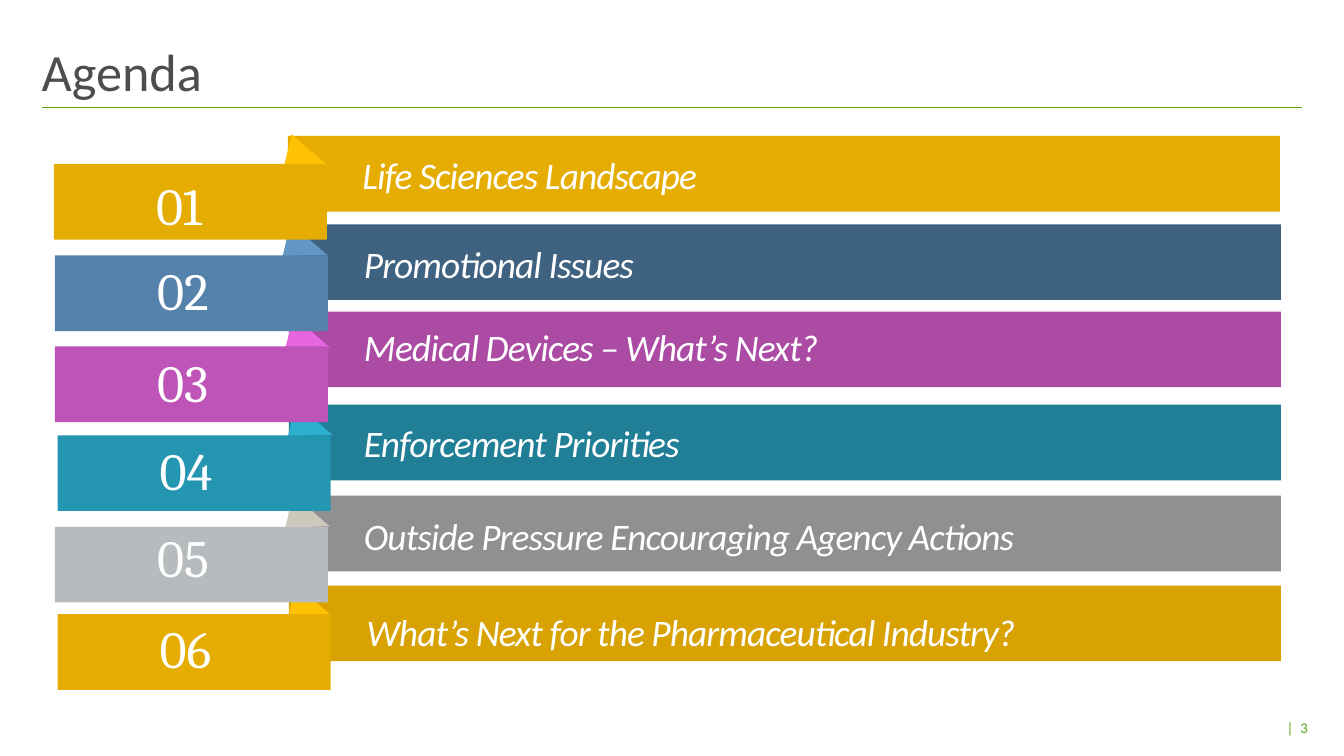
from pptx import Presentation
from pptx.dml.color import RGBColor
from pptx.enum.shapes import MSO_CONNECTOR, MSO_SHAPE
from pptx.enum.text import MSO_ANCHOR, PP_ALIGN
from pptx.oxml.ns import qn
from pptx.util import Cm, Pt
from lxml.etree import SubElement

TITLE = "Agenda"
PAGE_NUMBER = "|  3"
GREEN, WHITE, DARK = "58A618", "FFFFFF", "4D4D4D"

# topic, (bar, fold, tab colours), (bar, fold, tab, number, topic tops),
# (bar, fold, tab, topic lefts); all lengths in cm
AGENDA = [
    ("Life Sciences Landscape", ("E5AC02", "FFC103", "E5AC02"),
     (2.57, 2.54, 3.10, 3.15, 2.74), (5.44, 5.51, 1.02, 6.60)),
    ("Promotional Issues", ("3F6280", "6297C4", "5482AB"),
     (4.24, 4.22, 4.83, 4.75, 4.42), (5.46, 5.49, 1.04, 6.63)),
    ("Medical Devices – What’s Next?", ("AC4BA4", "E666E0", "BF54B8"),
     (5.89, 5.97, 6.55, 6.50, 5.99), (5.46, 5.54, 1.04, 6.63)),
    ("Enforcement Priorities", ("207F96", "2DAFCF", "2596B2"),
     (7.65, 7.62, 8.23, 8.15, 7.82), (5.46, 5.59, 1.09, 6.63)),
    ("Outside Pressure Encouraging Agency Actions", ("908F91", "CCC8BB", "B6BBBE"),
     (9.37, 9.35, 9.96, 9.80, 9.58), (5.46, 5.54, 1.04, 6.63)),
    ("What’s Next for the Pharmaceutical Industry?", ("D8A202", "FFC103", "E5AC02"),
     (11.07, 11.05, 11.61, 11.51, 11.38), (5.46, 5.59, 1.09, 6.68)),
]
BAR_WIDTH, TAB_WIDTH, BAND_HEIGHT = 18.75, 5.16, 1.43
FOLD_WIDTH, FOLD_HEIGHT = 0.64, 0.81
NUMBER_OFFSET = 1.68


def color(value):
    return RGBColor.from_string(value)


def add_block(page, kind, left, top, width, height, fill):
    block = page.shapes.add_shape(kind, Cm(left), Cm(top), Cm(width), Cm(height))
    block.shadow.inherit = False
    block.fill.solid()
    block.fill.fore_color.rgb = color(fill)
    block.line.fill.background()
    return block


def add_text(page, text, left, top, width, height, size, font="Calibri", fill=WHITE,
             italic=False, spacing=0, anchor=MSO_ANCHOR.TOP, align=PP_ALIGN.LEFT,
             wrap=True, insets=(0.25, 0.13, 0.25, 0.13)):
    box = page.shapes.add_textbox(Cm(left), Cm(top), Cm(width), Cm(height))
    frame = box.text_frame
    frame.word_wrap = wrap
    frame.vertical_anchor = anchor
    (frame.margin_left, frame.margin_top,
     frame.margin_right, frame.margin_bottom) = map(Cm, insets)
    para = frame.paragraphs[0]
    para.alignment = align
    span = para.add_run()
    span.text = text
    span.font.name = font
    span.font.size = Pt(size)
    span.font.italic = italic
    span.font.color.rgb = color(fill)
    if spacing:
        span.font._element.set("spc", str(int(spacing * 100)))


def add_rule(page, left, right, top):
    rule = page.shapes.add_connector(
        MSO_CONNECTOR.STRAIGHT, Cm(left), Cm(top), Cm(right), Cm(top))
    rule.line.color.rgb = color(GREEN)
    rule.line.width = Pt(0.5)
    SubElement(rule._element.spPr, qn("a:effectLst"))


def add_topic(page, number, topic, colors, tops, lefts):
    bar_top, fold_top, tab_top, number_top, topic_top = tops
    bar_left, fold_left, tab_left, topic_left = lefts
    bar_color, fold_color, tab_color = colors
    add_block(page, MSO_SHAPE.RECTANGLE, bar_left, bar_top,
              BAR_WIDTH, BAND_HEIGHT, bar_color)
    fold = add_block(page, MSO_SHAPE.ISOSCELES_TRIANGLE, fold_left, fold_top,
                     FOLD_WIDTH, FOLD_HEIGHT, fold_color)
    fold.adjustments[0] = 0.66
    fold.rotation = 103.5
    add_block(page, MSO_SHAPE.RECTANGLE, tab_left, tab_top,
              TAB_WIDTH, BAND_HEIGHT, tab_color)
    add_text(page, f"{number:02}", tab_left + NUMBER_OFFSET, number_top,
             1.78, 1.45, 28, font="Cambria")
    add_text(page, topic, topic_left, topic_top, 17.55, 1.12, 20,
             italic=True, spacing=-0.5)


def main():
    deck = Presentation()
    deck.slide_width, deck.slide_height = Cm(25.4), Cm(14.29)
    page = deck.slides.add_slide(deck.slide_layouts[6])
    add_rule(page, 0.79, 24.61, 2.04)
    add_text(page, TITLE, 0.79, 0.79, 23.8, 1.24, 28, fill=DARK,
             anchor=MSO_ANCHOR.BOTTOM, insets=(0, 0.1, 0, 0.1))
    # Later topics lie behind earlier ones
    for number, item in reversed(list(enumerate(AGENDA, 1))):
        add_topic(page, number, *item)
    add_text(page, PAGE_NUMBER, 24.31, 13.44, 0.66, 0.61, 8, fill=GREEN,
             anchor=MSO_ANCHOR.MIDDLE, align=PP_ALIGN.RIGHT, wrap=False,
             insets=(0, 0.13, 0.25, 0.13))
    deck.save("out.pptx")


if __name__ == "__main__":
    main()
